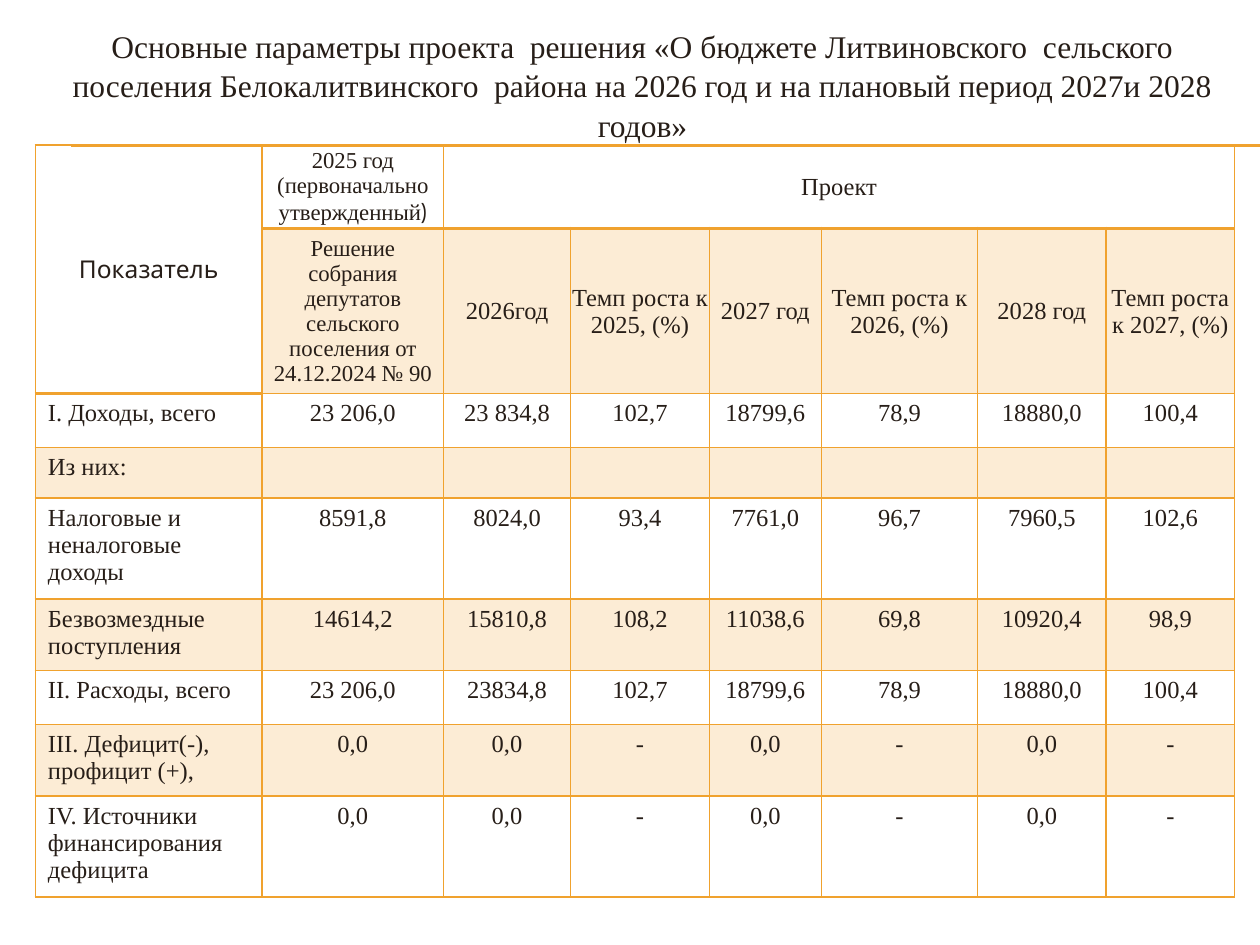
from lxml import etree
from pptx import Presentation
from pptx.dml.color import RGBColor
from pptx.enum.shapes import MSO_CONNECTOR
from pptx.enum.text import MSO_ANCHOR, PP_ALIGN
from pptx.oxml.ns import qn
from pptx.util import Inches, Pt

LEFT, CENTER = PP_ALIGN.LEFT, PP_ALIGN.CENTER
TOP, MIDDLE = MSO_ANCHOR.TOP, MSO_ANCHOR.MIDDLE
STRAIGHT = MSO_CONNECTOR.STRAIGHT

THEME = {
    "ink": "271E18", "accent": "F0A22E", "band_alpha": 20,
    "serif": "Times New Roman", "sans": "Cabin",
    "title": 18, "body": 14, "small": 13,
    "rule": 0.75, "border": 1, "header_border": 2,
}

TITLE = ("Основные параметры проекта  решения «О бюджете Литвиновского  сельского "
         "поселения Белокалитвинского  района на 2026 год и на плановый период "
         "2027и 2028 годов»")
INDICATOR = "Показатель"
APPROVED = ["2025 год", ("(первоначально утвержденный", (")", THEME["sans"]))]
PROJECT = "Проект"
SUBHEADS = [
    "Решение собрания депутатов сельского поселения от 24.12.2024 № 90",
    "2026год", "Темп роста к 2025, (%)", "2027 год", "Темп роста к 2026, (%)",
    "2028 год", "Темп роста к 2027, (%)",
]
BUDGET = [
    ["I. Доходы, всего", "23 206,0", "23 834,8", "102,7", "18799,6", "78,9", "18880,0", "100,4"],
    ["Из них:"] + [""] * 7,
    ["Налоговые и неналоговые доходы", "8591,8", "8024,0", "93,4", "7761,0", "96,7", "7960,5", "102,6"],
    ["Безвозмездные поступления", "14614,2", "15810,8", "108,2", "11038,6", "69,8", "10920,4", "98,9"],
    ["II. Расходы, всего", "23 206,0", "23834,8", "102,7", "18799,6", "78,9", "18880,0", "100,4"],
    ["III. Дефицит(-), профицит (+),", "0,0", "0,0", "-", "0,0", "-", "0,0", "-"],
    ["IV. Источники финансирования дефицита", "0,0", "0,0", "-", "0,0", "-", "0,0", "-"],
]
COLUMNS = [1.8, 1.44, 1.01, 1.1, 0.89, 1.24, 1.02, 1.02]
ROWS = [0.63, 1.26, 0.43, 0.38, 0.75, 0.53, 0.43, 0.53, 0.75]
TABLE_LEFT, TABLE_TOP = 0.28, 1.15
RULE_LEFT, RULE_TOPS = 0.56, (1.15, 1.16)


def write(frame, text, size=THEME["body"], font=THEME["serif"], align=CENTER, spacing=None):
    paragraphs = text if isinstance(text, list) else [text]
    for index, content in enumerate(paragraphs):
        paragraph = frame.add_paragraph() if index else frame.paragraphs[0]
        paragraph.alignment = align
        if spacing:
            paragraph.line_spacing = spacing
        for part in content if isinstance(content, tuple) else (content,):
            words, face = part if isinstance(part, tuple) else (part, font)
            run = paragraph.add_run()
            run.text = words
            run.font.size = Pt(size)
            run.font.name = face
            run.font.color.rgb = RGBColor.from_string(THEME["ink"])


def set_borders(cell, **widths):
    properties = cell._tc.get_or_add_tcPr()
    for side in ("L", "R", "T", "B"):
        width = widths.get(side, THEME["border"])
        line = etree.SubElement(properties, qn(f"a:ln{side}"), w=str(Pt(width)))
        fill = etree.SubElement(line, qn("a:solidFill"))
        etree.SubElement(fill, qn("a:srgbClr"), val=THEME["accent"])


def set_band(cell, banded):
    if not banded:
        cell.fill.background()
        return
    cell.fill.solid()
    cell.fill.fore_color.rgb = RGBColor.from_string(THEME["accent"])
    color = cell._tc.tcPr.find(qn("a:solidFill")).find(qn("a:srgbClr"))
    etree.SubElement(color, qn("a:alpha"), val=str(THEME["band_alpha"] * 1000))


def add_rule(slide, top, right):
    rule = slide.shapes.add_connector(STRAIGHT, Inches(RULE_LEFT), Inches(top), right, Inches(top))
    rule.line.color.rgb = RGBColor.from_string(THEME["accent"])
    rule.line.width = Pt(THEME["rule"])
    etree.SubElement(rule._element.spPr, qn("a:effectLst"))


def add_title(slide):
    box = slide.shapes.add_textbox(Inches(0.35), Inches(0.21), Inches(9.5), Inches(0.92))
    box.text_frame.word_wrap = True
    box.text_frame.vertical_anchor = MIDDLE
    write(box.text_frame, TITLE, size=THEME["title"], spacing=1.05)


def add_budget_table(slide):
    table = slide.shapes.add_table(
        len(ROWS), len(COLUMNS), Inches(TABLE_LEFT), Inches(TABLE_TOP),
        Inches(sum(COLUMNS)), Inches(sum(ROWS))).table
    table.first_row = table.horz_banding = False
    for column, width in zip(table.columns, COLUMNS):
        column.width = Inches(width)
    for row, height in zip(table.rows, ROWS):
        row.height = Inches(height)

    table.cell(0, 0).merge(table.cell(1, 0))
    table.cell(0, 2).merge(table.cell(0, len(COLUMNS) - 1))
    grid = [[INDICATOR, APPROVED, PROJECT] + [None] * 5, [None] + SUBHEADS] + BUDGET
    thick = THEME["header_border"]
    for r, texts in enumerate(grid):
        for c, text in enumerate(texts):
            cell = table.cell(r, c)
            header = r < 2
            if r == 0 or (r, c) == (1, 0):
                set_borders(cell, B=thick)
            elif r == 1 or (r, c) == (2, 0):
                set_borders(cell, T=thick)
            else:
                set_borders(cell)
            set_band(cell, r % 2 == 1 and (r, c) != (1, 0))
            cell.vertical_anchor = MIDDLE if header else TOP
            if header:
                cell.margin_left = cell.margin_right = cell.margin_top = Inches(0.01)
                cell.margin_bottom = 0
            if text is not None:
                write(cell.text_frame, text,
                      size=THEME["small"] if header and c == 1 else THEME["body"],
                      font=THEME["sans"] if text == INDICATOR else THEME["serif"],
                      align=CENTER if header or c else LEFT)


def main():
    deck = Presentation()
    deck.slide_width, deck.slide_height = Inches(10), Inches(7.5)
    slide = deck.slides.add_slide(deck.slide_layouts[6])
    for top in RULE_TOPS:
        add_rule(slide, top, deck.slide_width)
    add_title(slide)
    add_budget_table(slide)
    deck.save("out.pptx")


if __name__ == "__main__":
    main()
